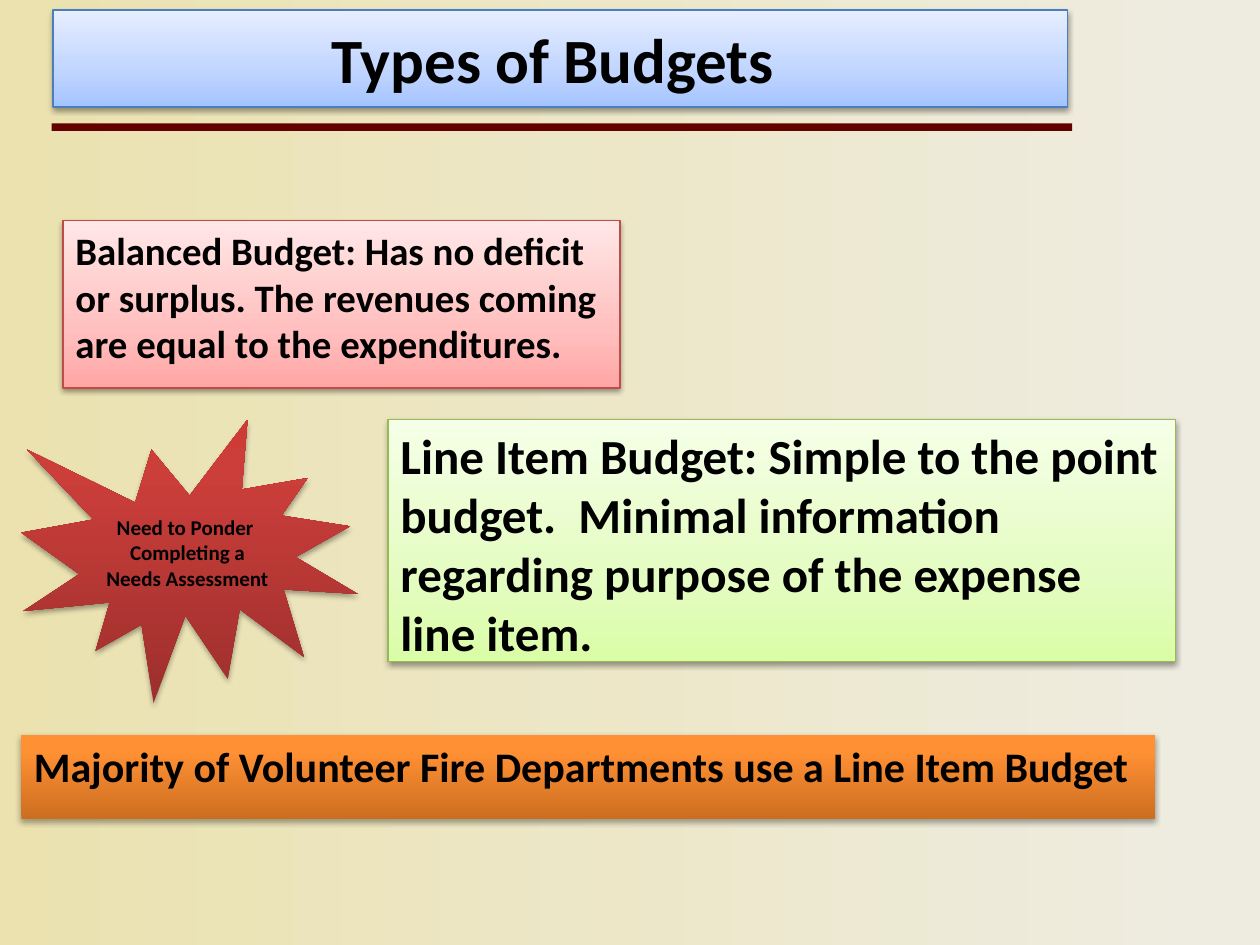
from lxml.etree import SubElement
from pptx import Presentation
from pptx.dml.color import RGBColor
from pptx.enum.shapes import MSO_SHAPE as Shape
from pptx.enum.text import MSO_ANCHOR as Anchor, PP_ALIGN as Align
from pptx.oxml.ns import qn
from pptx.util import Inches, Pt

WIDTH, HEIGHT = 10, 7.5
FONT, INK = "Calibri", "000000"
BACKDROP = [(0, "EBE2AF"), (97, "EEECE1")]
RULE = dict(place=(0.41, 0.98, 8.1, 0.06), color="630000")
SOFT, STRONG = (38, 1.6), (35, 1.8)

PANELS = [
    dict(text="Types of Budgets ", place=(0.42, 0.08, 8.05, 0.77),
         stops=[(0, "A4C4FF"), (35, "BFD4FF"), (100, "E6EEFF")],
         edge="4B7EBC", size=36, align=Align.CENTER, anchor=Anchor.MIDDLE),
    dict(text="Balanced Budget: Has no deficit or surplus. "
              "The revenues coming are equal to the expenditures.",
         place=(0.5, 1.75, 4.42, 1.33),
         stops=[(0, "FFA6A5"), (35, "FFC0BF"), (100, "FFE7E7")],
         edge="BF4C48", size=22.2),
    dict(text="Line Item Budget: Simple to the point budget.  Minimal "
              "information regarding purpose of the expense line item.",
         place=(3.08, 3.33, 6.25, 1.92),
         stops=[(0, "DAFDA7"), (35, "E4FCC2"), (100, "F5FFE7")],
         edge="98B955", size=28),
    dict(text="Majority of Volunteer Fire Departments use a Line Item Budget",
         place=(0.17, 5.83, 9, 0.67),
         stops=[(0, "CC6E20"), (80, "FF9034"), (100, "FF9136")],
         size=24, shade=STRONG),
    dict(text="Need to Ponder  Completing a Needs Assessment ",
         place=(0.17, 3.33, 2.67, 2.25), kind=Shape.EXPLOSION1,
         stops=[(0, "9C2F2D"), (80, "CB3E3A"), (100, "CE3B37")],
         size=12, align=Align.CENTER, anchor=Anchor.MIDDLE, shade=STRONG),
]


def rgb(color):
    return RGBColor.from_string(color)


def set_gradient(owner, fill, stops, angle):
    fill.gradient()
    gradient = owner.element.find(".//" + qn("a:gradFill"))
    stop_list = gradient.find(qn("a:gsLst"))
    for old in list(stop_list):
        stop_list.remove(old)
    for share, color in stops:
        stop = SubElement(stop_list, qn("a:gs"), pos=str(share * 1000))
        SubElement(stop, qn("a:srgbClr"), val=color)
    gradient.find(qn("a:lin")).set("ang", str(angle * 60000))


def add_box(page, place, kind=Shape.RECTANGLE, edge=None):
    box = page.shapes.add_shape(kind, *map(Inches, place))
    if edge:
        box.line.color.rgb = rgb(edge)
        box.line.width = Pt(0.75)
    else:
        box.line.fill.background()
    box.shadow.inherit = False
    return box


def set_shadow(box, opacity, distance):
    effects = box.element.spPr.find(qn("a:effectLst"))
    shadow = SubElement(effects, qn("a:outerShdw"), blurRad=str(Pt(3.1)),
                        dist=str(Pt(distance)), dir=str(90 * 60000), rotWithShape="0")
    color = SubElement(shadow, qn("a:srgbClr"), val="000000")
    SubElement(color, qn("a:alpha"), val=str(opacity * 1000))


def write(box, text, size, align=Align.LEFT, anchor=Anchor.TOP):
    frame = box.text_frame
    frame.word_wrap = True
    frame.vertical_anchor = anchor
    para = frame.paragraphs[0]
    para.alignment = align
    span = para.add_run()
    span.text = text
    span.font.name, span.font.size, span.font.bold = FONT, Pt(size), True
    span.font.color.rgb = rgb(INK)


def add_panel(page, text, place, stops, size, kind=Shape.RECTANGLE,
              edge=None, shade=SOFT, **layout):
    box = add_box(page, place, kind, edge)
    set_gradient(box, box.fill, stops, 270)
    set_shadow(box, *shade)
    write(box, text, size, **layout)


def main():
    deck = Presentation()
    deck.slide_width, deck.slide_height = Inches(WIDTH), Inches(HEIGHT)
    page = deck.slides.add_slide(deck.slide_layouts[6])
    set_gradient(page, page.background.fill, BACKDROP, 0)
    rule = add_box(page, RULE["place"])
    rule.fill.solid()
    rule.fill.fore_color.rgb = rgb(RULE["color"])
    for panel in PANELS:
        add_panel(page, **panel)
    deck.save("out.pptx")


if __name__ == "__main__":
    main()
